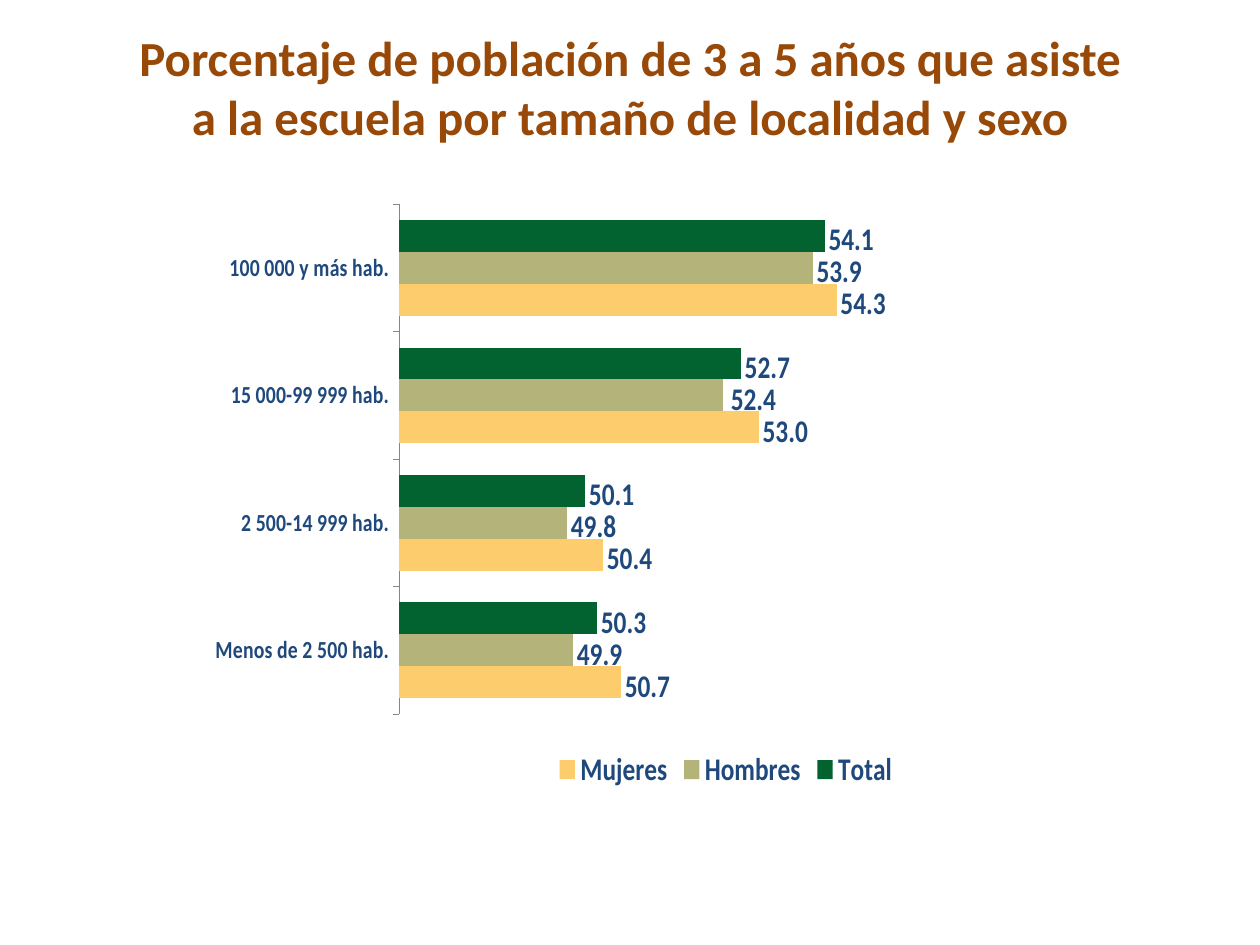
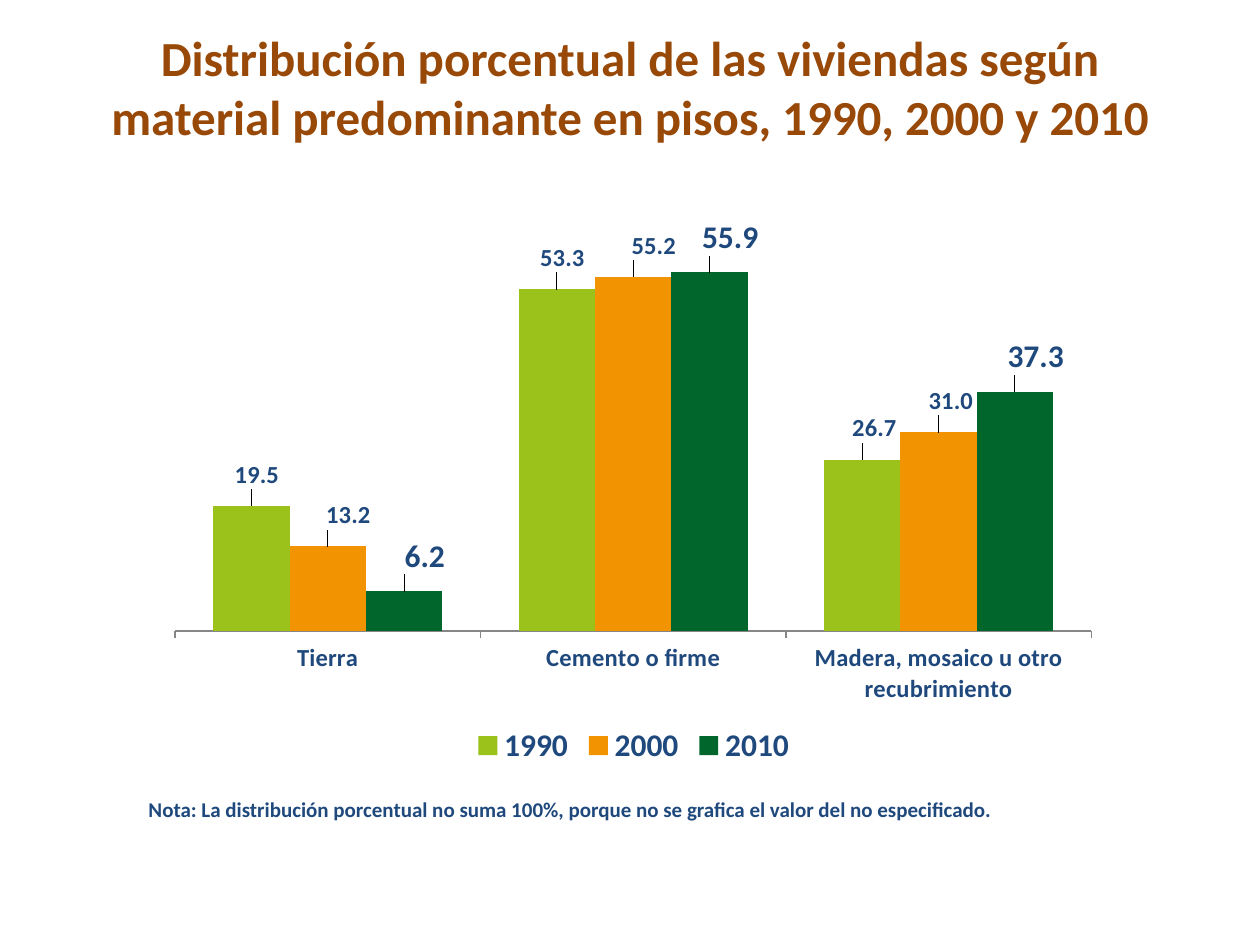
from lxml import etree
from pptx import Presentation
from pptx.chart.data import CategoryChartData
from pptx.dml.color import RGBColor
from pptx.enum.chart import XL_CHART_TYPE as ChartType
from pptx.enum.chart import XL_LABEL_POSITION as LabelPosition
from pptx.enum.chart import XL_LEGEND_POSITION as LegendPosition
from pptx.enum.chart import XL_TICK_LABEL_POSITION as TickLabels
from pptx.enum.chart import XL_TICK_MARK as TickMark
from pptx.enum.text import MSO_ANCHOR as Anchor
from pptx.enum.text import MSO_AUTO_SIZE as AutoSize
from pptx.enum.text import PP_ALIGN as Align
from pptx.oxml.ns import qn
from pptx.util import Pt

COLORS = {
    "title": "984807", "text": "1F497D", "axis": "868686", "base": "000000",
    "total": "026331", "men": "B4B37A", "women": "FDCD6D",
    "y1990": "9BC11B", "y2000": "F29402", "y2010": "00662C",
}
TITLE_BOX = (0, 15.84, 720, 62.64)

# Each series: name, colour, label size, values, label shifts (share of chart size)
ATTENDANCE = {
    "kind": ChartType.BAR_CLUSTERED,
    "categories": ["100 000 y más hab.", "15 000-99 999 hab.",
                   "2 500-14 999 hab.", "Menos de 2 500 hab."],
    "scale": (47, 55), "reverse": True,
    "plot": {"x": 0.025, "y": 0.043, "w": 0.697, "h": 0.826},
    "series": [
        ("Total", "total", 18, (54.1, 52.7, 50.1, 50.3), [(0, 0.006)] * 4),
        ("Hombres", "men", 18, (53.9, 52.4, 49.8, 49.9),
         [(0, 0.006), (0.006, 0.006), (0, 0.006), (0, 0.006)]),
        ("Mujeres", "women", 18, (54.3, 53, 50.4, 50.7), [(0, 0.006)] * 4),
    ],
}
FLOORS = {
    "kind": ChartType.COLUMN_CLUSTERED,
    "categories": ["Tierra", "Cemento o firme",
                   "Madera, mosaico u otro recubrimiento"],
    "scale": (0, 60), "reverse": False,
    "plot": {"x": 0.012, "y": 0.07, "w": 0.975, "h": 0.682},
    "series": [
        ("1990", "y1990", 14, (19.5, 53.3, 26.7),
         [(0.006, -0.02), (0.006, -0.02), (0.013, -0.02)]),
        ("2000", "y2000", 14, (13.2, 55.2, 31),
         [(0.022, -0.02), (0.022, -0.02), (0.013, -0.02)]),
        ("2010", "y2010", 18, (6.2, 55.9, 37.3), [(0.022, -0.02)] * 3),
    ],
}


def rgb(name):
    return RGBColor.from_string(COLORS[name])


def set_all(target, **values):
    for name, value in values.items():
        setattr(target, name, value)


def style_font(font, size, color="text", name="Calibri", bold=True):
    set_all(font, name=name, size=Pt(size), bold=bold)
    font.color.rgb = rgb(color)


def make_layout(values):
    """Return a manual chart layout holding the given elements."""
    layout = etree.Element(qn("c:layout"))
    manual = etree.SubElement(layout, qn("c:manualLayout"))
    for tag, value in values.items():
        etree.SubElement(manual, qn(f"c:{tag}")).set("val", str(value))
    return layout


def place_plot(chart, plot):
    area = chart.plots[0]._element.getparent()
    for old in area.findall(qn("c:layout")):
        area.remove(old)
    area.insert(0, make_layout(
        {"layoutTarget": "inner", "xMode": "edge", "yMode": "edge", **plot}))


def add_title(page, text):
    title = page.shapes.title
    left, top, width, height = map(Pt, TITLE_BOX)
    set_all(title, left=left, top=top, width=width, height=height)
    frame = title.text_frame
    set_all(frame, margin_left=0, margin_top=0, margin_right=0, margin_bottom=0,
            word_wrap=False, auto_size=AutoSize.NONE, vertical_anchor=Anchor.TOP)
    frame.text = text
    para = frame.paragraphs[0]
    para.alignment = Align.CENTER
    for span in para.runs:
        style_font(span.font, 28, "title")


def add_note(page, box, text):
    note = page.shapes.add_textbox(*map(Pt, box))
    frame = note.text_frame
    set_all(frame, word_wrap=True, auto_size=AutoSize.SHAPE_TO_FIT_TEXT)
    frame.text = text
    style_font(frame.paragraphs[0].runs[0].font, 12)


def style_axes(chart, details):
    category, value = chart.category_axis, chart.value_axis
    set_all(category, major_tick_mark=TickMark.OUTSIDE, has_major_gridlines=False,
            reverse_order=details["reverse"])
    style_font(category.tick_labels.font, 14)
    category.format.line.color.rgb = rgb("axis")
    category.format.line.width = Pt(0.75)
    low, high = details["scale"]
    set_all(value, minimum_scale=low, maximum_scale=high, has_major_gridlines=False,
            major_tick_mark=TickMark.NONE, tick_label_position=TickLabels.NONE)
    value.format.line.fill.background()


def style_series(series, color, size, shifts):
    series.format.fill.solid()
    series.format.fill.fore_color.rgb = rgb(color)
    series.invert_if_negative = False
    labels = series.data_labels
    set_all(labels, show_value=True, number_format="0.0",
            number_format_is_linked=False, position=LabelPosition.OUTSIDE_END)
    style_font(labels.font, size)
    # Nudge each value label away from its bar
    for index, (x, y) in enumerate(shifts):
        label = series.points[index].data_label
        style_font(label.font, size)
        label.position = LabelPosition.OUTSIDE_END
        for element in labels._element.findall(qn("c:dLbl")):
            mark = element.find(qn("c:idx"))
            if mark.get("val") == str(index):
                mark.addnext(make_layout({"x": x, "y": y}))


def add_bars(page, box, details):
    data = CategoryChartData(number_format="0.0")
    data.categories = details["categories"]
    for name, _, _, values, _ in details["series"]:
        data.add_series(name, values)
    chart = page.shapes.add_chart(details["kind"], *map(Pt, box), data).chart
    set_all(chart, has_title=False, has_legend=True)
    style_font(chart.font, 8, "base", "Arial", False)
    set_all(chart.legend, position=LegendPosition.BOTTOM, include_in_layout=False)
    style_font(chart.legend.font, 18)
    set_all(chart.plots[0], gap_width=100, overlap=0, vary_by_categories=False)
    style_axes(chart, details)
    for series, (_, color, size, _, shifts) in zip(chart.plots[0].series,
                                                  details["series"]):
        style_series(series, color, size, shifts)
    place_plot(chart, details["plot"])


def add_page(deck, title, box, details):
    page = deck.slides.add_slide(deck.slide_layouts[5])
    add_title(page, title)
    add_bars(page, box, details)
    return page


def main():
    deck = Presentation()
    set_all(deck, slide_width=Pt(720), slide_height=Pt(540))
    # School attendance
    add_page(deck, "Porcentaje de población de 3 a 5 años que asiste\v"
             "a la escuela por tamaño de localidad y sexo",
             (123.12, 101.52, 488.16, 352.8), ATTENDANCE)
    # Floor materials
    page = add_page(deck, "Distribución porcentual de las viviendas según\v"
                    "material predominante en pisos, 1990, 2000 y 2010",
                    (93.6, 118.08, 537.12, 322.56), FLOORS)
    add_note(page, (77.76, 451.44, 532.08, 21.6),
             "Nota: La distribución porcentual no suma 100%, "
             "porque no se grafica el valor del no especificado.")
    deck.save("out.pptx")


if __name__ == "__main__":
    main()
